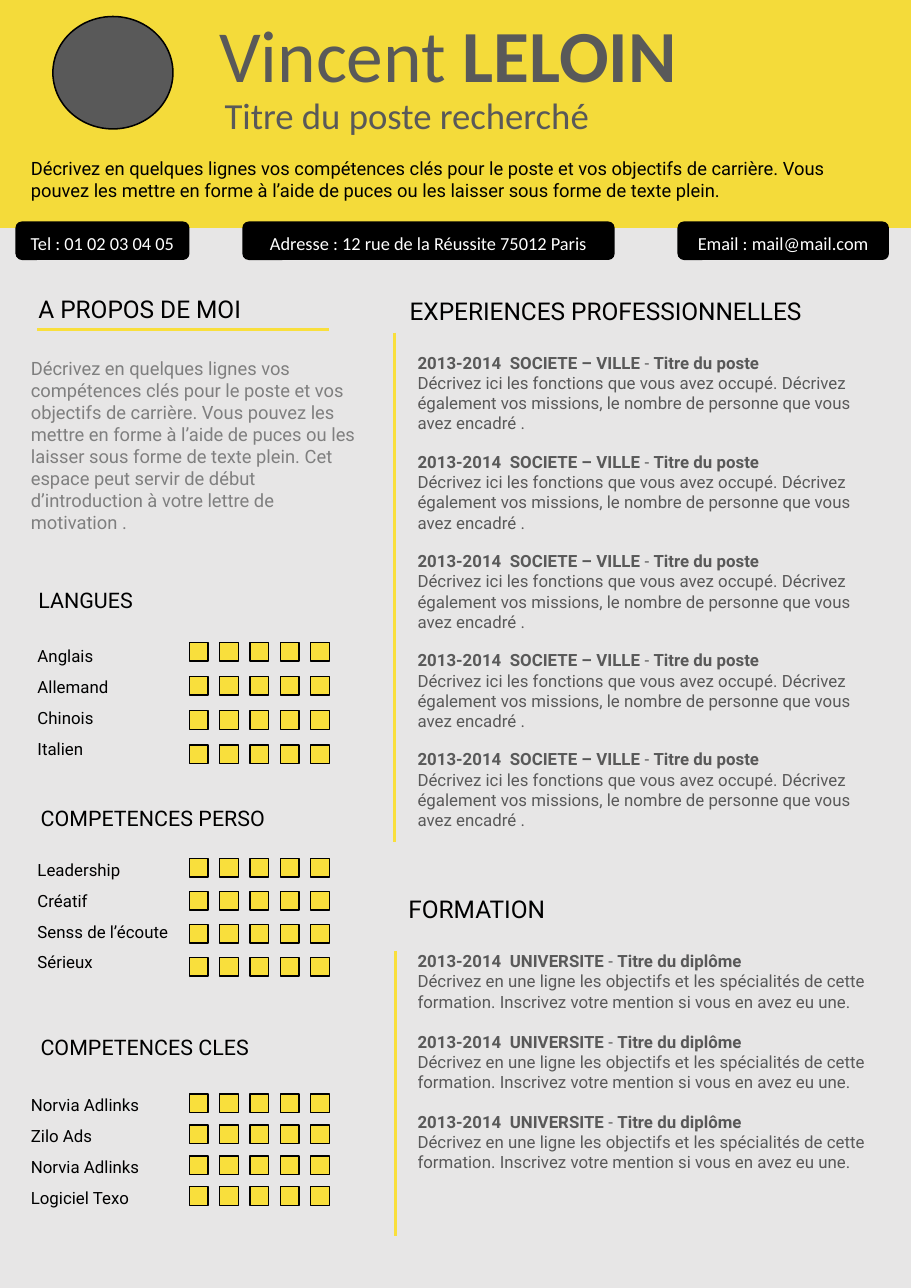
from dataclasses import dataclass

from pptx import Presentation
from pptx.dml.color import RGBColor
from pptx.enum.shapes import MSO_CONNECTOR, MSO_SHAPE as SHAPE
from pptx.enum.text import MSO_ANCHOR, PP_ALIGN
from pptx.oxml.ns import qn
from pptx.shapes.autoshape import Shape
from pptx.text.text import TextFrame
from pptx.util import Inches, Pt

COLORS = {
    "banner": "F4DB3A", "page": "E7E6E6", "accent": "F9DF3C", "black": "000000",
    "dark": "595959", "grey": "7F7F7F", "white": "FFFFFF",
}
SUMMARY = (
    "Décrivez en quelques lignes vos compétences clés pour le poste et vos objectifs "
    "de carrière. Vous pouvez les mettre en forme à l’aide de puces ou les laisser "
    "sous forme de texte plein."
)
ABOUT = SUMMARY + (
    " Cet espace peut servir de début d’introduction à votre lettre de motivation ."
)
JOB = (
    "Décrivez ici les fonctions que vous avez occupé. Décrivez également vos missions, "
    "le nombre de personne que vous avez encadré ."
)
DEGREE = (
    "Décrivez en une ligne les objectifs et les spécialités de cette formation. "
    "Inscrivez votre mention si vous en avez eu une."
)


@dataclass
class Heading:
    text: str
    left: float
    top: float
    width: float
    size: int


@dataclass
class Contact:
    text: str
    left: float
    width: float


@dataclass
class SkillGroup:
    names: list[str]
    left: float
    names_top: float
    squares_top: float
    row_step: float


@dataclass
class Timeline:
    place: str
    title: str
    details: str
    count: int
    top: float
    step: float
    height: float


HEADINGS = [
    Heading("EXPERIENCES PROFESSIONNELLES", 3.62, 2.64, 3.89, 16),
    Heading("FORMATION", 3.61, 8.07, 1.54, 16),
    Heading("A PROPOS DE MOI", 0.25, 2.62, 2.18, 16),
    Heading("LANGUES", 0.25, 5.28, 1.1, 14),
    Heading("COMPETENCES PERSO", 0.27, 7.26, 2.32, 14),
    Heading("COMPETENCES CLES", 0.27, 9.34, 2.17, 14),
]
CONTACTS = [
    Contact("Tel : 01 02 03 04 05", 0.14, 1.58),
    Contact("Adresse : 12 rue de la Réussite 75012 Paris", 2.2, 3.38),
    Contact("Email : mail@mail.com", 6.15, 1.92),
]
SKILLS = [
    SkillGroup(["Anglais", "Allemand", "Chinois", "Italien"], 0.34, 5.86, 5.83, 0.31),
    SkillGroup(["Leadership", "Créatif", "Senss de l’écoute", "Sérieux"],
               0.34, 7.8, 7.79, 0.3),
    SkillGroup(["Norvia Adlinks", "Zilo Ads", "Norvia Adlinks", "Logiciel Texo"],
               0.28, 9.94, 9.93, 0.28),
]
TIMELINES = [
    Timeline("SOCIETE – VILLE", "Titre du poste", JOB, 5, 3.2, 0.9, 0.74),
    Timeline("UNIVERSITE", "Titre du diplôme", DEGREE, 3, 8.63, 0.73, 0.57),
]
RULES = [(0.34, 2.99, 2.99, 2.99), (3.58, 3.02, 3.58, 7.64), (3.59, 8.63, 3.59, 11.22)]
SQUARES_LEFT, SQUARE_STEP, SQUARE_SIZE, SQUARE_COUNT = 1.72, 0.275, 0.17, 5

prs = Presentation()
prs.slide_width, prs.slide_height = Inches(8.27), Inches(11.69)
slide = prs.slides.add_slide(prs.slide_layouts[6])


def rgb(color: str) -> RGBColor:
    return RGBColor.from_string(COLORS[color])


def add_block(kind: SHAPE, left: float, top: float, width: float, height: float,
              fill: str, outlined: bool = False) -> Shape:
    block = slide.shapes.add_shape(
        kind, Inches(left), Inches(top), Inches(width), Inches(height))
    block.shadow.inherit = False
    block.fill.solid()
    block.fill.fore_color.rgb = rgb(fill)
    if outlined:
        block.line.color.rgb = rgb("black")
        block.line.width = Pt(1)
    else:
        block.line.fill.background()
    return block


def add_text(left: float, top: float, width: float, height: float,
             inset: bool = False) -> TextFrame:
    """Add a box: a one-line title with insets, or wrapped text without."""
    frame = slide.shapes.add_textbox(
        Inches(left), Inches(top), Inches(width), Inches(height)).text_frame
    frame.word_wrap = not inset
    if not inset:
        frame.margin_left = frame.margin_right = 0
        frame.margin_top = frame.margin_bottom = 0
    return frame


def style(frame: TextFrame, size: float, color: str, family: str = "Roboto") -> None:
    for paragraph in frame.paragraphs:
        font = paragraph.font
        font.name, font.size, font.color.rgb = family, Pt(size), rgb(color)


def add_rule(x1: float, y1: float, x2: float, y2: float) -> None:
    rule = slide.shapes.add_connector(
        MSO_CONNECTOR.STRAIGHT, Inches(x1), Inches(y1), Inches(x2), Inches(y2))
    rule.line.color.rgb = rgb("accent")
    rule.line.width = Pt(2.25)
    properties = rule._element.spPr
    properties.append(properties.makeelement(qn("a:effectLst"), {}))


def add_contact(contact: Contact) -> None:
    badge = add_block(SHAPE.ROUNDED_RECTANGLE, contact.left, 2.01,
                      contact.width, 0.35, "black")
    frame = badge.text_frame
    frame.margin_left = frame.margin_right = 0
    frame.margin_top, frame.margin_bottom = Inches(0.05), 0
    frame.vertical_anchor = MSO_ANCHOR.MIDDLE
    frame.text = contact.text
    frame.paragraphs[0].alignment = PP_ALIGN.CENTER
    style(frame, 12, "white", "Calibri")


def add_skills(group: SkillGroup) -> None:
    frame = add_text(group.left, group.names_top, 1.38, 1.04)
    frame.text = "\n".join(group.names)
    style(frame, 11, "black")
    for row, paragraph in enumerate(frame.paragraphs):
        paragraph.space_after = Pt(7)
        for column in range(SQUARE_COUNT):
            add_block(SHAPE.RECTANGLE, SQUARES_LEFT + column * SQUARE_STEP,
                      group.squares_top + row * group.row_step,
                      SQUARE_SIZE, SQUARE_SIZE, "accent", outlined=True)


def add_timeline(timeline: Timeline) -> None:
    for index in range(timeline.count):
        frame = add_text(3.79, timeline.top + index * timeline.step,
                         4.28, timeline.height)
        heading = frame.paragraphs[0]
        for text, bold in ((f"2013-2014  {timeline.place}", True), (" - ", False),
                           (timeline.title, True)):
            run = heading.add_run()
            run.text, run.font.bold = text, bold
        frame.add_paragraph().text = timeline.details
        style(frame, 11, "dark")


add_block(SHAPE.RECTANGLE, -0.01, 0, 8.28, 2.07, "banner")
add_block(SHAPE.RECTANGLE, -0.01, 2.07, 8.28, 9.62, "page")
add_block(SHAPE.OVAL, 0.48, 0.15, 1.09, 1.02, "dark", outlined=True)

full_name = add_text(1.89, 0.03, 4.37, 0.91, inset=True)
full_name.text = "Vincent "
surname = full_name.paragraphs[0].add_run()
surname.text, surname.font.bold = "LELOIN", True
style(full_name, 48, "dark", "Calibri")

job_title = add_text(1.94, 0.79, 3.54, 0.5, inset=True)
job_title.text = "Titre du poste recherché"
style(job_title, 24, "dark", "Calibri")

summary = add_text(0.28, 1.43, 7.7, 0.42)
summary.text = SUMMARY
style(summary, 12, "black")
about = add_text(0.28, 3.24, 3.01, 1.62)
about.text = ABOUT
style(about, 12, "grey")

for section in HEADINGS:
    heading_frame = add_text(section.left, section.top, section.width, 0.37, inset=True)
    heading_frame.text = section.text
    style(heading_frame, section.size, "black")
for ends in RULES:
    add_rule(*ends)
for entry in CONTACTS:
    add_contact(entry)
for skill_group in SKILLS:
    add_skills(skill_group)
for career in TIMELINES:
    add_timeline(career)

prs.save("out.pptx")
